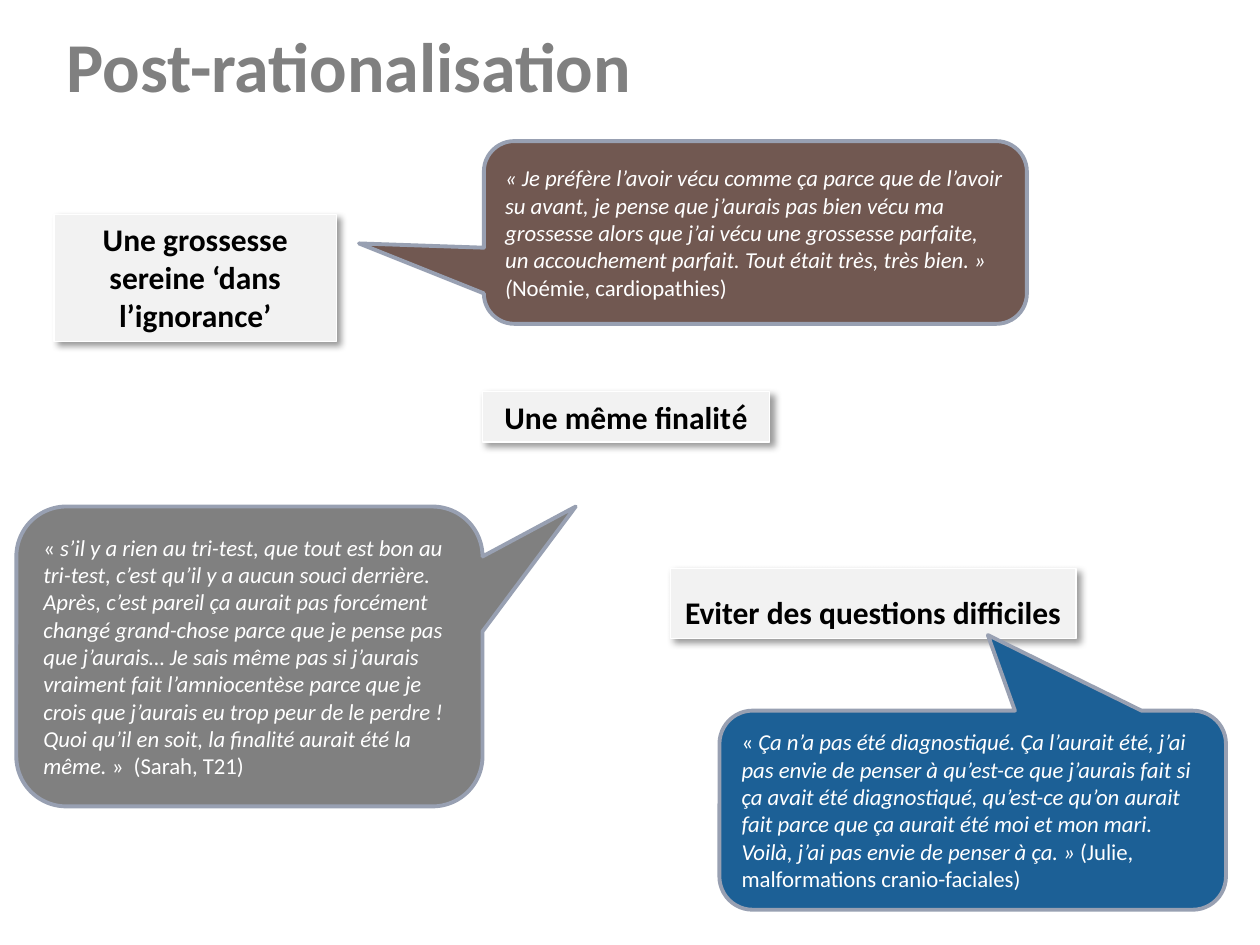
from lxml import etree
from pptx import Presentation
from pptx.dml.color import RGBColor
from pptx.enum.shapes import MSO_SHAPE
from pptx.enum.text import MSO_ANCHOR, MSO_AUTO_SIZE, PP_ALIGN
from pptx.oxml import parse_xml
from pptx.oxml.ns import nsdecls
from pptx.util import Inches, Pt

RECTANGLE = MSO_SHAPE.RECTANGLE
CALLOUT = MSO_SHAPE.ROUNDED_RECTANGULAR_CALLOUT
LEFT, CENTER = PP_ALIGN.LEFT, PP_ALIGN.CENTER
TOP, MIDDLE = MSO_ANCHOR.TOP, MSO_ANCHOR.MIDDLE
FIT_SHAPE, NO_FIT = MSO_AUTO_SIZE.SHAPE_TO_FIT_TEXT, MSO_AUTO_SIZE.NONE

WHITE = RGBColor(0xFF, 0xFF, 0xFF)
BLACK = RGBColor(0x00, 0x00, 0x00)
GRAY = RGBColor(0x80, 0x80, 0x80)
PALE_GRAY = RGBColor(0xF2, 0xF2, 0xF2)
BROWN = RGBColor(0x71, 0x58, 0x51)
BLUE = RGBColor(0x1C, 0x60, 0x96)
EDGE = RGBColor(0x98, 0xA0, 0xB2)

FONT = "Calibri"
ACCENT_FONT = "Karla"

# The page is a grid of square cells: 100 columns by 75 rows
PAGE_WIDTH, PAGE_HEIGHT = Inches(10), Inches(7.5)
CELL = PAGE_WIDTH // 100

# Label box in cells, runs as (text, font), line spacing, wrap
LABELS = [
    ((38.3, 31.1, 22.8, 4), [("Une même finalit", FONT), ("é", ACCENT_FONT)], 1, True),
    ((53.2, 45.1, 32.2, 5.6), [("Eviter des questions difficiles", FONT)], 1.5, False),
    ((4.3, 17, 22.4, 10.1), [("Une grossesse sereine ‘dans l’ignorance’", FONT)], 1, True),
]

# Quote box in cells, pointer tip as shares of the box, fill, runs as (text, italic)
QUOTES = [
    ((38.4, 11.2, 43.1, 14.5), (-0.73, 0.06), BROWN, [
        ("« Je préfère l’avoir vécu comme ça parce que de l’avoir su avant, je pense que "
         "j’aurais pas bien vécu ma grossesse alors que j’ai vécu une grossesse parfaite, "
         "un accouchement parfait. Tout était très, très bien. » (", True),
        ("Noémie, cardiopathies)", False)]),
    ((1.3, 40.2, 37, 23.8), (0.7, -0.5), GRAY, [
        ("« ", False),
        ("s’il y a rien au tri-test, que tout est bon au tri-test, c’est qu’il y a aucun "
         "souci derrière. Après, c’est pareil ça aurait pas forcément changé grand-chose "
         "parce que je pense pas que j’aurais… Je sais même pas si j’aurais vraiment fait "
         "l’amniocentèse parce que je crois que j’aurais eu trop peur de le perdre ! Quoi "
         "qu’il en soit, la finalité aurait été la même. ", True),
        ("»  (Sarah, T21)", False)]),
    ((57.1, 56.4, 40.2, 15.8), (0.03, -0.88), BLUE, [
        ("« ", False),
        ("Ça n’a pas été diagnostiqué. Ça l’aurait été, j’ai pas envie de penser à "
         "qu’est-ce que j’aurais fait si ça avait été diagnostiqué, qu’est-ce qu’on aurait "
         "fait parce que ça aurait été moi et mon mari. Voilà, j’ai pas envie de penser à "
         "ça. » ", True),
        ("(Julie, malformations cranio-faciales)", False)]),
]


def to_grid(box):
    return [int(cells * CELL) for cells in box]


def add_span(para, text, size, color, font=FONT, bold=False, italic=False):
    span = para.add_run()
    span.text = text
    span.font.name, span.font.size = font, Pt(size)
    span.font.bold, span.font.italic = bold, italic
    span.font.color.rgb = color
    return span


def add_panel(page, kind, box, fill, edge, edge_width):
    panel = page.shapes.add_shape(kind, *to_grid(box))
    panel.shadow.inherit = False
    panel.fill.solid()
    panel.fill.fore_color.rgb = fill
    panel.line.color.rgb = edge
    panel.line.width = Pt(edge_width)
    panel.text_frame.word_wrap = True
    return panel


def add_drop_shadow(shape):
    effects = shape._element.spPr.find("{*}effectLst")
    effects.append(parse_xml(
        f'<a:outerShdw {nsdecls("a")} blurRad="{Pt(4)}" dist="{Pt(3)}" dir="2700000" '
        'algn="tl" rotWithShape="0"><a:srgbClr val="000000"><a:alpha val="40000"/>'
        '</a:srgbClr></a:outerShdw>'))


def add_label(page, box, runs, spacing, wrap):
    label = add_panel(page, RECTANGLE, box, PALE_GRAY, WHITE, 0.75)
    add_drop_shadow(label)
    frame = label.text_frame
    frame.word_wrap = wrap
    frame.auto_size = FIT_SHAPE
    frame.vertical_anchor = TOP
    para = frame.paragraphs[0]
    para.alignment = CENTER
    para.line_spacing = spacing
    for text, font in runs:
        add_span(para, text, 18, BLACK, font, bold=True)


def add_quote(page, box, tip, fill, runs):
    quote = add_panel(page, CALLOUT, box, fill, EDGE, 2.22)
    quote.adjustments[0], quote.adjustments[1] = tip
    quote.text_frame.vertical_anchor = MIDDLE
    para = quote.text_frame.paragraphs[0]
    para.alignment = LEFT
    for text, italic in runs:
        add_span(para, text, 13, WHITE, italic=italic)


def place_title(page, box, text):
    title = page.shapes.title
    title.left, title.top, title.width, title.height = to_grid(box)
    frame = title.text_frame
    frame.vertical_anchor = TOP
    frame.auto_size = NO_FIT
    para = frame.paragraphs[0]
    para.alignment = LEFT
    span = add_span(para, text, 40, GRAY, bold=True)
    # Thin white outline around the letters
    outline = parse_xml(f'<a:ln {nsdecls("a")} w="{Pt(1.1)}"/>')
    solid = etree.SubElement(outline, outline.tag.replace("}ln", "}solidFill"))
    etree.SubElement(solid, outline.tag.replace("}ln", "}srgbClr"), val=str(WHITE))
    span.font._element.insert(0, outline)


def main():
    deck = Presentation()
    deck.slide_width, deck.slide_height = PAGE_WIDTH, PAGE_HEIGHT
    page = deck.slides.add_slide(deck.slide_layouts[5])
    for label in LABELS:
        add_label(page, *label)
    for quote in QUOTES:
        add_quote(page, *quote)
    place_title(page, (4.3, 1.3, 95.7, 12.5), "Post-rationalisation")
    deck.save("out.pptx")


if __name__ == "__main__":
    main()
